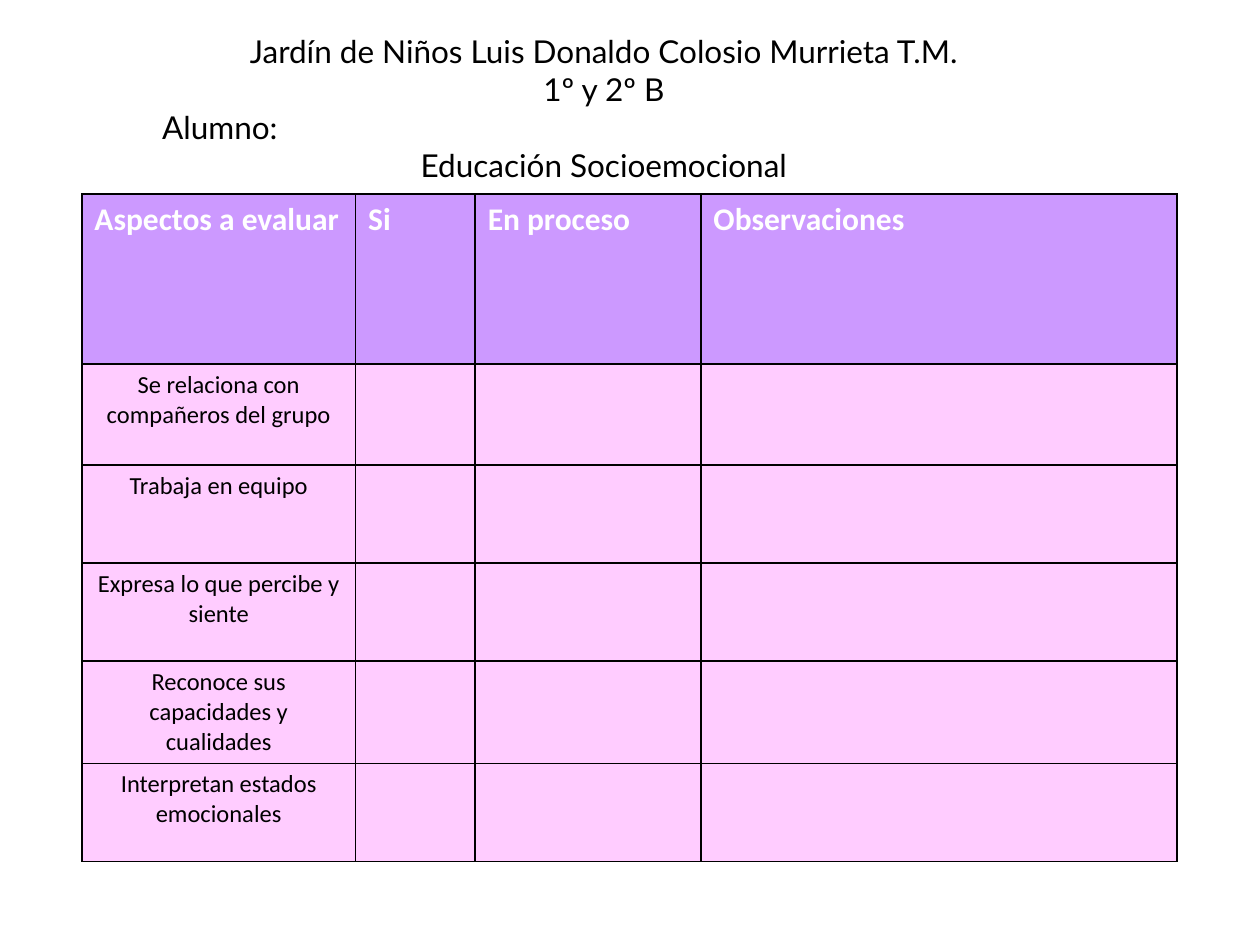
from dataclasses import dataclass

from lxml import etree
from pptx import Presentation
from pptx.dml.color import RGBColor
from pptx.enum.text import MSO_AUTO_SIZE, PP_ALIGN
from pptx.oxml.ns import qn
from pptx.util import Cm, Pt

LEFT, CENTER = PP_ALIGN.LEFT, PP_ALIGN.CENTER
FIT_SHAPE = MSO_AUTO_SIZE.SHAPE_TO_FIT_TEXT


@dataclass(frozen=True)
class Theme:
    header_fill: str = "CC99FF"
    body_fill: str = "FFCCFF"
    white: str = "FFFFFF"
    black: str = "000000"
    heading_font: str = "Lato"
    table_font: str = "Calibri"
    large: int = 18
    small: int = 14
    border: int = 1


theme = Theme()


def format_paragraph(p, font, size, color, align, bold=False):
    p.alignment = align
    for r in p.runs:
        r.font.name = font
        r.font.size = Pt(size)
        r.font.bold = bold
        r.font.color.rgb = RGBColor.from_string(color)


def add_borders(cell):
    """Draw a solid line on all four sides; call before filling the cell."""
    tc_pr = cell._tc.get_or_add_tcPr()
    for side in ("lnL", "lnR", "lnT", "lnB"):
        ln = etree.SubElement(tc_pr, qn(f"a:{side}"), w=str(Pt(theme.border)))
        fill = etree.SubElement(ln, qn("a:solidFill"))
        etree.SubElement(fill, qn("a:srgbClr"), val=theme.black)


prs = Presentation()
prs.slide_width, prs.slide_height = Cm(25.4), Cm(19.05)
slide = prs.slides.add_slide(prs.slide_layouts[6])

# Evaluation table
headers = ["Aspectos a evaluar", "Si", "En proceso", "Observaciones"]
aspects = [
    "Se relaciona con compañeros del grupo",
    "Trabaja en equipo",
    "Expresa lo que percibe y siente",
    "Reconoce sus capacidades y cualidades",
    "Interpretan estados emocionales",
]
col_widths = [5.52, 2.41, 4.55, 9.6]
row_heights = [3.43, 2.03] + [1.98] * 4
rows = [headers] + [[aspect, "", "", ""] for aspect in aspects]

table = slide.shapes.add_table(
    len(rows), len(headers), Cm(1.65), Cm(3.91),
    Cm(sum(col_widths)), Cm(sum(row_heights))).table
for column, width in zip(table.columns, col_widths):
    column.width = Cm(width)

for i, (row, height, texts) in enumerate(zip(table.rows, row_heights, rows)):
    row.height = Cm(height)
    is_header = i == 0
    if is_header:
        fill, color, size, align = theme.header_fill, theme.white, theme.large, LEFT
    else:
        fill, color, size, align = theme.body_fill, theme.black, theme.small, CENTER
    for cell, text in zip(row.cells, texts):
        add_borders(cell)
        cell.fill.solid()
        cell.fill.fore_color.rgb = RGBColor.from_string(fill)
        if text:
            cell.text_frame.text = text
            format_paragraph(cell.text_frame.paragraphs[0], theme.table_font,
                             size, color, align, bold=is_header)

# Heading
heading = [
    ("Jardín de Niños Luis Donaldo Colosio Murrieta T.M.", CENTER),
    ("1º y 2º B", CENTER),
    ("Alumno:", LEFT),
    ("Educación Socioemocional", CENTER),
]
tf = slide.shapes.add_textbox(Cm(3.02), Cm(0.53), Cm(18.31), Cm(3.33)).text_frame
tf.word_wrap = True
tf.auto_size = FIT_SHAPE
tf.text = "\n".join(text for text, _ in heading)
for p, (_, align) in zip(tf.paragraphs, heading):
    format_paragraph(p, theme.heading_font, theme.large, theme.black, align)

prs.save("out.pptx")
